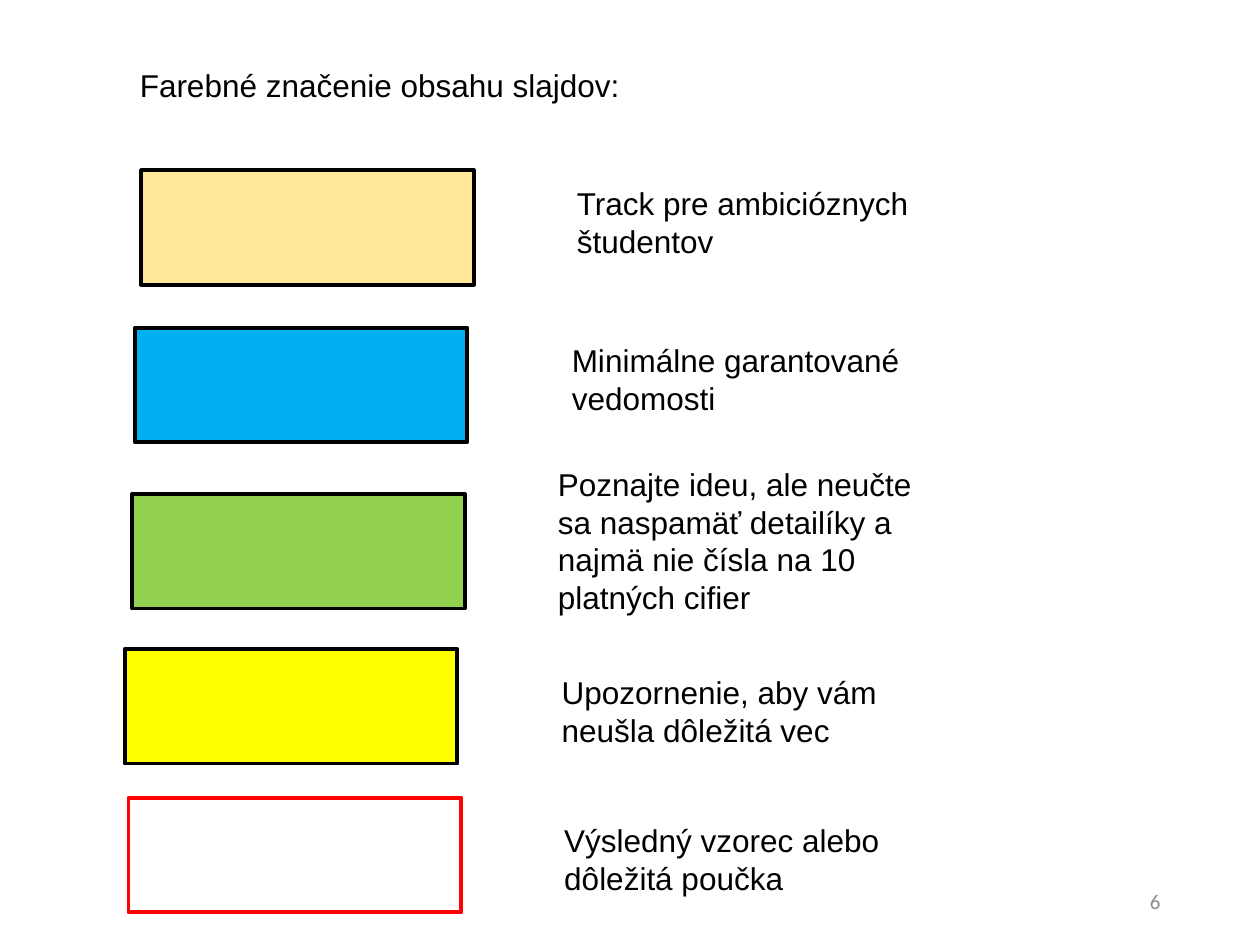
import pptx
import pptx.util
import pptx.dml.color
import pptx.enum.shapes
import pptx.enum.text

PX = 9144  # EMU per px, 100 px to the inch
ALIGN = pptx.enum.text.PP_ALIGN
ANCHOR = pptx.enum.text.MSO_ANCHOR
COLORS = {
    "black": "000000", "white": "FFFFFF", "gray": "8C8C8C", "red": "FF0000",
    "cream": "FFE699", "blue": "00B0F0", "green": "92D050", "yellow": "FFFF00",
}
SWATCH = (264, 91)
WIDTH = 320

# fill, line, swatch corner, label corner, label height, label fill, label
LEGEND = [
    ("cream", "black", (112, 135), (448, 141), 71, None,
     "Track pre ambicióznych študentov"),
    ("blue", "black", (107, 260), (444, 266), 71, "white",
     "Minimálne garantované vedomosti"),
    ("green", "black", (105, 392), (433, 364), 131, "white",
     "Poznajte ideu, ale neučte sa naspamäť detailíky "
     "a najmä nie čísla na 10 platných cifier"),
    ("yellow", "black", (99, 515), (436, 529), 71, "white",
     "Upozornenie, aby vám neušla dôležitá vec"),
    ("white", "red", (102, 633), (438, 647), 71, "white",
     "Výsledný vzorec alebo dôležitá poučka"),
]


def color(name):
    return pptx.dml.color.RGBColor.from_string(COLORS[name])


class Deck:
    """Holds the text style and the current slide."""

    font, size, ink = "Arial", 18, "black"

    def __init__(self, wide, high):
        self.prs = pptx.Presentation()
        self.prs.slide_width, self.prs.slide_height = wide * PX, high * PX
        layout = self.prs.slide_layouts.get_by_name("Title Only")
        self.slide = self.prs.slides.add_slide(layout)

    def set_text(self, shape, text, font=None, size=None, ink=None,
                 align=ALIGN.LEFT, anchor=ANCHOR.TOP):
        frame = shape.text_frame
        frame.text = text
        frame.word_wrap = True
        frame.auto_size = pptx.enum.text.MSO_AUTO_SIZE.NONE
        frame.vertical_anchor = anchor
        par = frame.paragraphs[0]
        par.alignment = align
        for run in par.runs:
            run.font.name = font or self.font
            run.font.size = pptx.util.Pt(size or self.size)
            run.font.color.rgb = color(ink or self.ink)

    def title(self, text, x, y, w, h):
        shape = self.slide.shapes.title
        shape.left, shape.top = x * PX, y * PX
        shape.width, shape.height = w * PX, h * PX
        self.set_text(shape, text)

    def label(self, text, x, y, w, h, fill=None, **style):
        box = self.slide.shapes.add_textbox(x * PX, y * PX, w * PX, h * PX)
        if fill:
            box.fill.solid()
            box.fill.fore_color.rgb = color(fill)
        self.set_text(box, text, **style)

    def swatch(self, x, y, w, h, fill, line):
        rect = self.slide.shapes.add_shape(
            pptx.enum.shapes.MSO_SHAPE.RECTANGLE,
            x * PX, y * PX, w * PX, h * PX)
        rect.shadow.inherit = False
        rect.fill.solid()
        rect.fill.fore_color.rgb = color(fill)
        rect.line.color.rgb = color(line)
        rect.line.width = pptx.util.Pt(2.25)


def main():
    deck = Deck(1000, 750)
    deck.title("Farebné značenie obsahu slajdov:", 101, 47, 799, 40)
    for fill, line, spot, place, high, back, text in LEGEND:
        deck.swatch(*spot, *SWATCH, fill, line)
        deck.label(text, *place, WIDTH, high, back)
    deck.label("6", 706, 695, 225, 40, font="Calibri", size=12, ink="gray",
               align=ALIGN.RIGHT, anchor=ANCHOR.MIDDLE)
    deck.prs.save("out.pptx")


if __name__ == "__main__":
    main()
